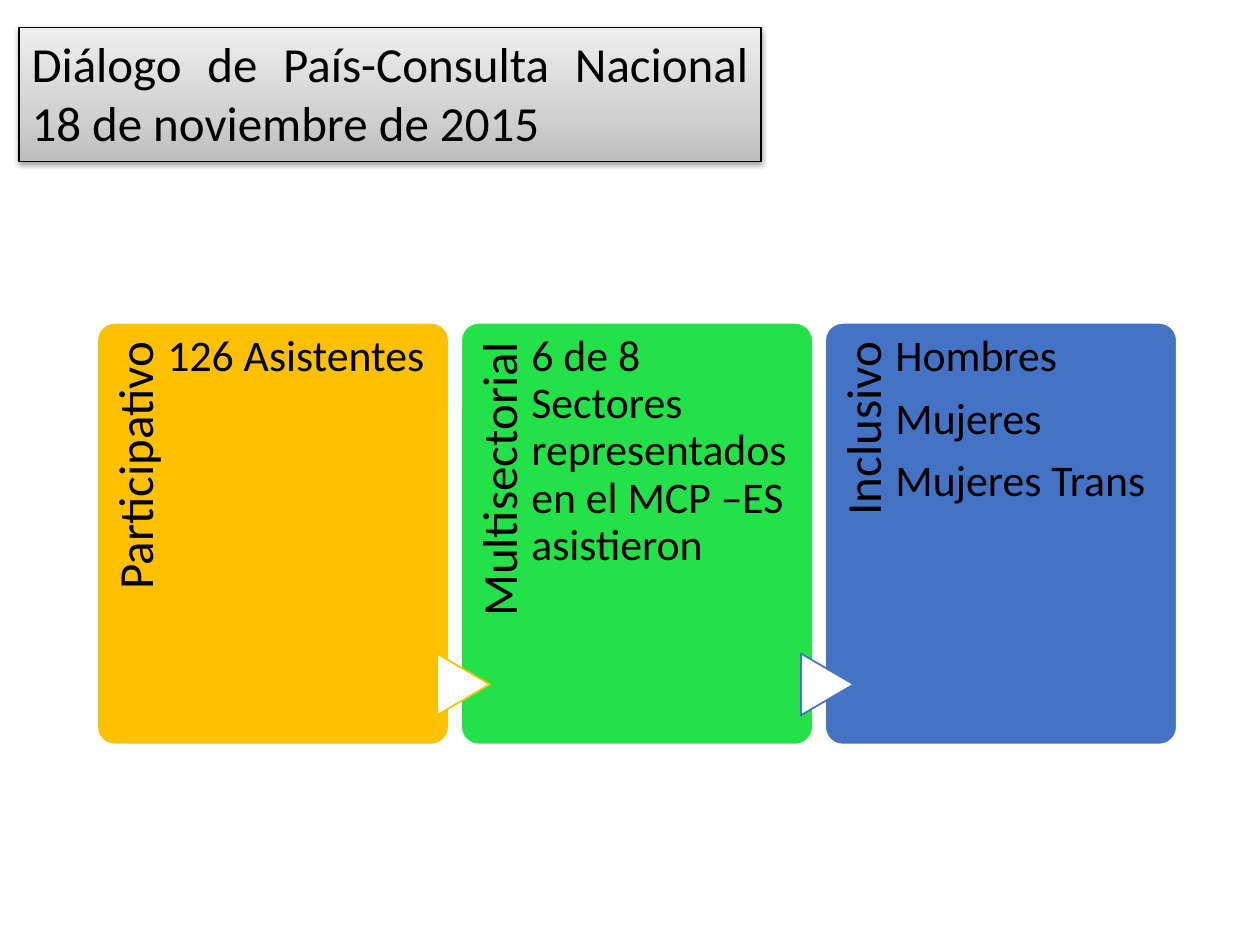
from copy import deepcopy

from lxml.etree import SubElement
from pptx import Presentation
from pptx.dml.color import RGBColor
from pptx.enum.shapes import MSO_SHAPE
from pptx.enum.text import MSO_ANCHOR, MSO_AUTO_SIZE, PP_ALIGN
from pptx.oxml.ns import qn
from pptx.util import Pt


def add_box(shape, left, top, width, height, fill, line):
    sp = s.shapes.add_shape(shape, Pt(left), Pt(top), Pt(width), Pt(height))
    sp.shadow.inherit = False
    sp.fill.solid()
    sp.fill.fore_color.rgb = RGBColor.from_string(fill)
    sp.line.color.rgb = RGBColor.from_string(line)
    sp.line.width = Pt(1)
    return sp


def add_text(text, left, top, width, height, size, inset_top, inset_right, align):
    sp = s.shapes.add_textbox(Pt(left), Pt(top), Pt(width), Pt(height))
    tf = sp.text_frame
    tf.word_wrap = True
    tf.margin_left = tf.margin_bottom = 0
    tf.margin_top, tf.margin_right = Pt(inset_top), Pt(inset_right)
    tf.text = text
    for p in tf.paragraphs:
        p.alignment = align
        p.line_spacing = 0.9
        p.space_after = Pt(size * 0.35)
        p.font.size = Pt(size)
        p.font.name = "Calibri"
        p.font.color.rgb = RGBColor.from_string("000000")
    return sp


prs = Presentation()
prs.slide_width, prs.slide_height = Pt(720), Pt(540)
s = prs.slides.add_slide(prs.slide_layouts[5])

# Title with gradient and shadow
title = s.shapes.title
title.left, title.top, title.width, title.height = Pt(10.8), Pt(15.8), Pt(424), Pt(76.3)
title.fill.gradient()
title.fill.gradient_angle = 90
stop_list = title._element.spPr.find(".//" + qn("a:gsLst"))
stop_list.append(deepcopy(stop_list[-1]))
stops = [(0, "BDBDBD"), (0.35, "D1D1D1"), (1, "EEEEEE")]
for stop, (position, color) in zip(title.fill.gradient_stops, stops):
    stop.position = position
    stop.color.rgb = RGBColor.from_string(color)
title.line.color.rgb = RGBColor.from_string("000000")
title.line.width = Pt(0.75)
effects = SubElement(title._element.spPr, qn("a:effectLst"))
shadow = SubElement(effects, qn("a:outerShdw"), blurRad=str(Pt(3.1)), dist=str(Pt(1.6)),
                    dir="5400000", rotWithShape="0")
shadow_color = SubElement(shadow, qn("a:srgbClr"), val="000000")
SubElement(shadow_color, qn("a:alpha"), val="38000")

tf = title.text_frame
tf.text = "Diálogo de País-Consulta Nacional 18 de noviembre de 2015"
tf.word_wrap = True
tf.auto_size = MSO_AUTO_SIZE.SHAPE_TO_FIT_TEXT
tf.vertical_anchor = MSO_ANCHOR.TOP
p = tf.paragraphs[0]
p.alignment = PP_ALIGN.JUSTIFY
p.runs[0].font.size = Pt(28)
p.runs[0].font.name = "Calibri"
p.runs[0].font.color.rgb = RGBColor.from_string("000000")

# Three cards, with an arrow across each gap in the previous or own colour
cards = [
    ("Participativo", "126 Asistentes", "FFC000", None),
    ("Multisectorial", "6 de 8 Sectores representados en el MCP –ES asistieron", "23E148", "FFC000"),
    ("Inclusivo", "Hombres\nMujeres\nMujeres Trans", "4472C4", "4472C4"),
]
top, width, height, pitch = 184.5, 201, 241, 208
for i, (label, body, fill, arrow_line) in enumerate(cards):
    left = 55.5 + i * pitch
    card = add_box(MSO_SHAPE.ROUNDED_RECTANGLE, left, top, width, height, fill, "FFFFFF")
    card.adjustments[0] = 0.05
    sp = add_text(label, left - 78, 264.2, 196.6, 39, 28, 7, 10, PP_ALIGN.RIGHT)
    sp.rotation = 270
    if arrow_line:
        arrow = add_box(MSO_SHAPE.FLOWCHART_EXTRACT, left - 16.4, 376, 35.3, 30.2,
                        "FFFFFF", arrow_line)
        arrow.rotation = 90
    add_text(body, left + 40.2, top, 150, height, 25, 6.2, 0, PP_ALIGN.LEFT)

prs.save("out.pptx")
